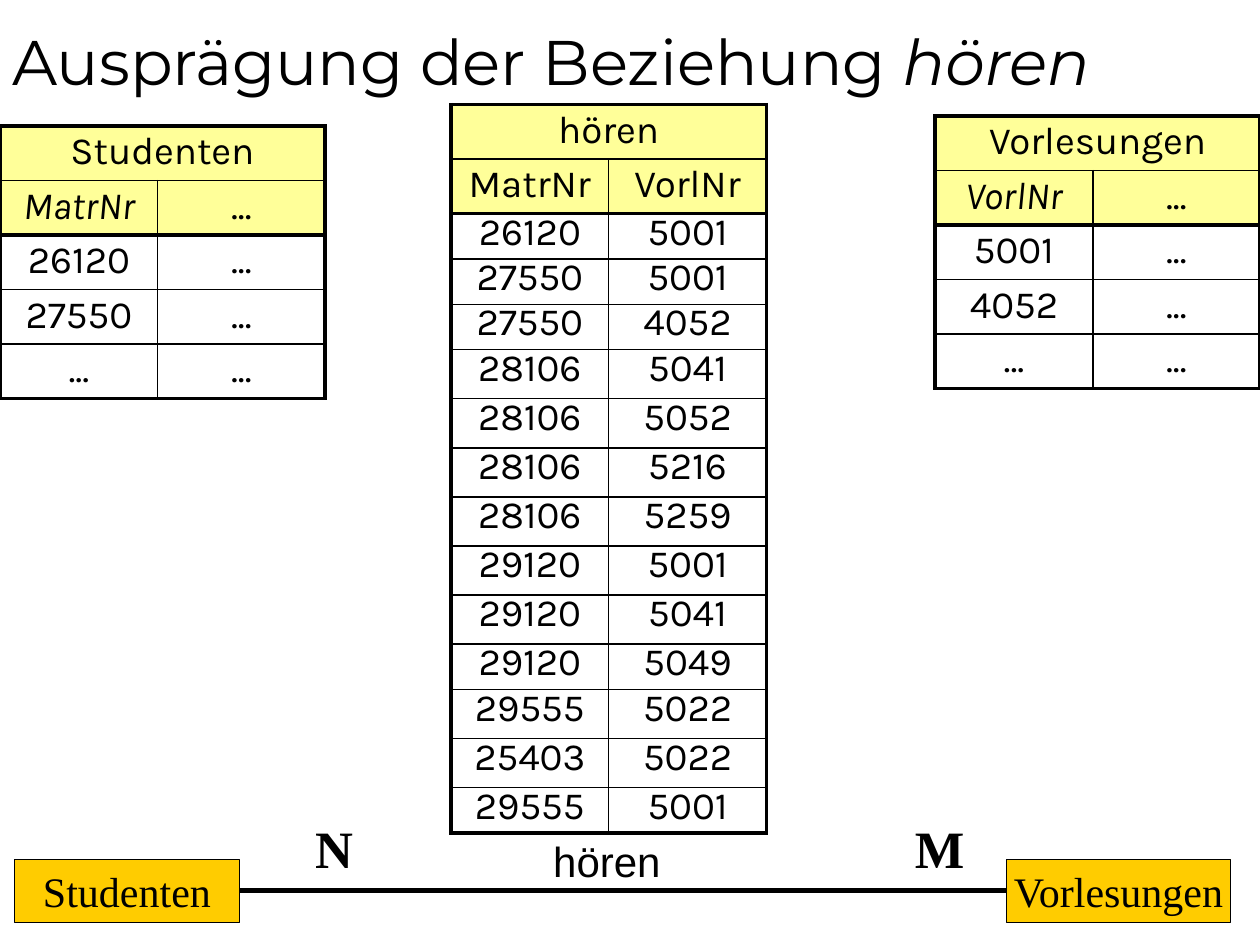
from lxml.etree import SubElement
from pptx import Presentation
from pptx.dml.color import RGBColor
from pptx.enum.shapes import MSO_CONNECTOR, MSO_SHAPE
from pptx.enum.text import MSO_ANCHOR, MSO_AUTO_SIZE, PP_ALIGN
from pptx.oxml.ns import qn
from pptx.util import Cm, Pt

BLACK = RGBColor(0x00, 0x00, 0x00)
HEADER_YELLOW = RGBColor(0xFF, 0xFF, 0x99)
ENTITY_ORANGE = RGBColor(0xFF, 0xCC, 0x00)
THICK, THIN = Pt(2.25), Pt(1)
HEADER_ROWS = 2


def add_span(para, text, font, size, bold=False, italic=False):
    span = para.add_run()
    span.text = text
    span.font.name = font
    span.font.size = Pt(size)
    span.font.bold = bold
    span.font.italic = italic
    span.font.color.rgb = BLACK


def add_border(cell, side, width):
    """Draw one solid edge of a cell; call in the order L, R, T, B, before the fill."""
    line = SubElement(cell._tc.get_or_add_tcPr(), qn(f"a:ln{side}"), w=str(width))
    SubElement(SubElement(line, qn("a:solidFill")), qn("a:srgbClr"), val=str(BLACK))


deck = Presentation()
deck.slide_width, deck.slide_height = Cm(25.4), Cm(19.05)
page = deck.slides.add_slide(deck.slide_layouts[6])

title = page.shapes.add_textbox(0, Cm(-0.43), Cm(25.4), Cm(2.54)).text_frame
title.word_wrap = True
title.vertical_anchor = MSO_ANCHOR.BOTTOM
add_span(title.paragraphs[0], "Ausprägung der Beziehung ", "Montserrat", 36)
add_span(title.paragraphs[0], "hören", "Montserrat", 36, italic=True)

attendance = [
    ("26120", "5001"), ("27550", "5001"), ("27550", "4052"), ("28106", "5041"),
    ("28106", "5052"), ("28106", "5216"), ("28106", "5259"), ("29120", "5001"),
    ("29120", "5041"), ("29120", "5049"), ("29555", "5022"), ("25403", "5022"),
    ("29555", "5001"),
]
# left, top, height, column widths, row heights, body line spacing, key in italics, rows
relations = [
    (0, 2.54, 5.46, (3.18, 3.37), (0.86, 0.79, 1.07, 0.79, 0.79), 0.9, True,
     [("Studenten", ""), ("MatrNr", "..."), ("26120", "..."), ("27550", "..."), ("...", "...")]),
    (9.09, 2.11, 14.6, (3.18, 3.18),
     (0.84, 0.79, 0.84, 0.79, 0.89, *[0.99] * 6, 0.89, 0.99, 0.99, 0.79), 0.7, False,
     [("hören", ""), ("MatrNr", "VorlNr"), *attendance]),
    (18.85, 2.34, 5.46, (3.18, 3.37), (0.86, 0.79, 0.86, 0.79, 0.79), 0.9, True,
     [("Vorlesungen", ""), ("VorlNr", "..."), ("5001", "..."), ("4052", "..."), ("...", "...")]),
]
for left, top, height, widths, heights, body_spacing, italic_key, rows in relations:
    frame = page.shapes.add_table(
        len(rows), 2, Cm(left), Cm(top), Cm(sum(widths)), Cm(height))
    table = frame.table
    table.first_row = table.horz_banding = False
    for column, width in zip(table.columns, widths):
        column.width = Cm(width)
    for row, row_height in zip(table.rows, heights):
        row.height = Cm(row_height)
    frame.height = Cm(height)
    table.cell(0, 0).merge(table.cell(0, 1))

    thick_edges = (0, HEADER_ROWS, len(rows))
    for r, texts in enumerate(rows):
        is_header = r < HEADER_ROWS
        for c, text in enumerate(texts):
            cell = table.cell(r, c)
            cell.margin_left = cell.margin_right = 0
            cell.margin_top = cell.margin_bottom = Cm(0.13)
            add_border(cell, "L", THIN if c == 1 and r > 0 else THICK)
            add_border(cell, "R", THIN if c == 0 and r > 0 else THICK)
            add_border(cell, "T", THICK if r in thick_edges else THIN)
            add_border(cell, "B", THICK if r + 1 in thick_edges else THIN)
            if is_header:
                cell.fill.solid()
                cell.fill.fore_color.rgb = HEADER_YELLOW
            else:
                cell.fill.background()
            if not text:
                continue
            para = cell.text_frame.paragraphs[0]
            para.alignment = PP_ALIGN.CENTER
            para.line_spacing = 0.9 if is_header else body_spacing
            before = SubElement(para._p.get_or_add_pPr(), qn("a:spcBef"))
            SubElement(before, qn("a:spcPct"), val="20000")
            add_span(para, text, "Karla", 22, italic=italic_key and (r, c) == (1, 0))

for name, left in (("Studenten", 0.3), ("Vorlesungen", 20.29)):
    entity = page.shapes.add_shape(
        MSO_SHAPE.RECTANGLE, Cm(left), Cm(17.32), Cm(4.52), Cm(1.27))
    entity.shadow.inherit = False
    entity.fill.solid()
    entity.fill.fore_color.rgb = ENTITY_ORANGE
    entity.line.color.rgb = BLACK
    entity.line.width = Pt(0.5)
    entity.text_frame.word_wrap = False
    entity.text_frame.vertical_anchor = MSO_ANCHOR.MIDDLE
    para = entity.text_frame.paragraphs[0]
    para.alignment = PP_ALIGN.CENTER
    add_span(para, name, "Times New Roman", 24)

relationship = page.shapes.add_connector(
    MSO_CONNECTOR.STRAIGHT, Cm(4.82), Cm(17.95), Cm(20.29), Cm(17.95))
relationship.line.color.rgb = BLACK
relationship.line.width = Pt(3)
SubElement(relationship._element.spPr, qn("a:effectLst"))

labels = [
    ("N", 6.1, 16.33, 1.27, 1.53, "Times New Roman", 30, True),
    ("M", 18.18, 16.33, 1.53, 1.53, "Times New Roman", 30, True),
    ("hören", 10.89, 16.72, 2.69, 1.27, "Arial", 24, False),
]
for text, left, top, width, height, font, size, bold in labels:
    box = page.shapes.add_textbox(Cm(left), Cm(top), Cm(width), Cm(height)).text_frame
    box.word_wrap = False
    box.auto_size = MSO_AUTO_SIZE.SHAPE_TO_FIT_TEXT
    box.paragraphs[0].alignment = PP_ALIGN.CENTER
    add_span(box.paragraphs[0], text, font, size, bold=bold)

deck.save("out.pptx")
